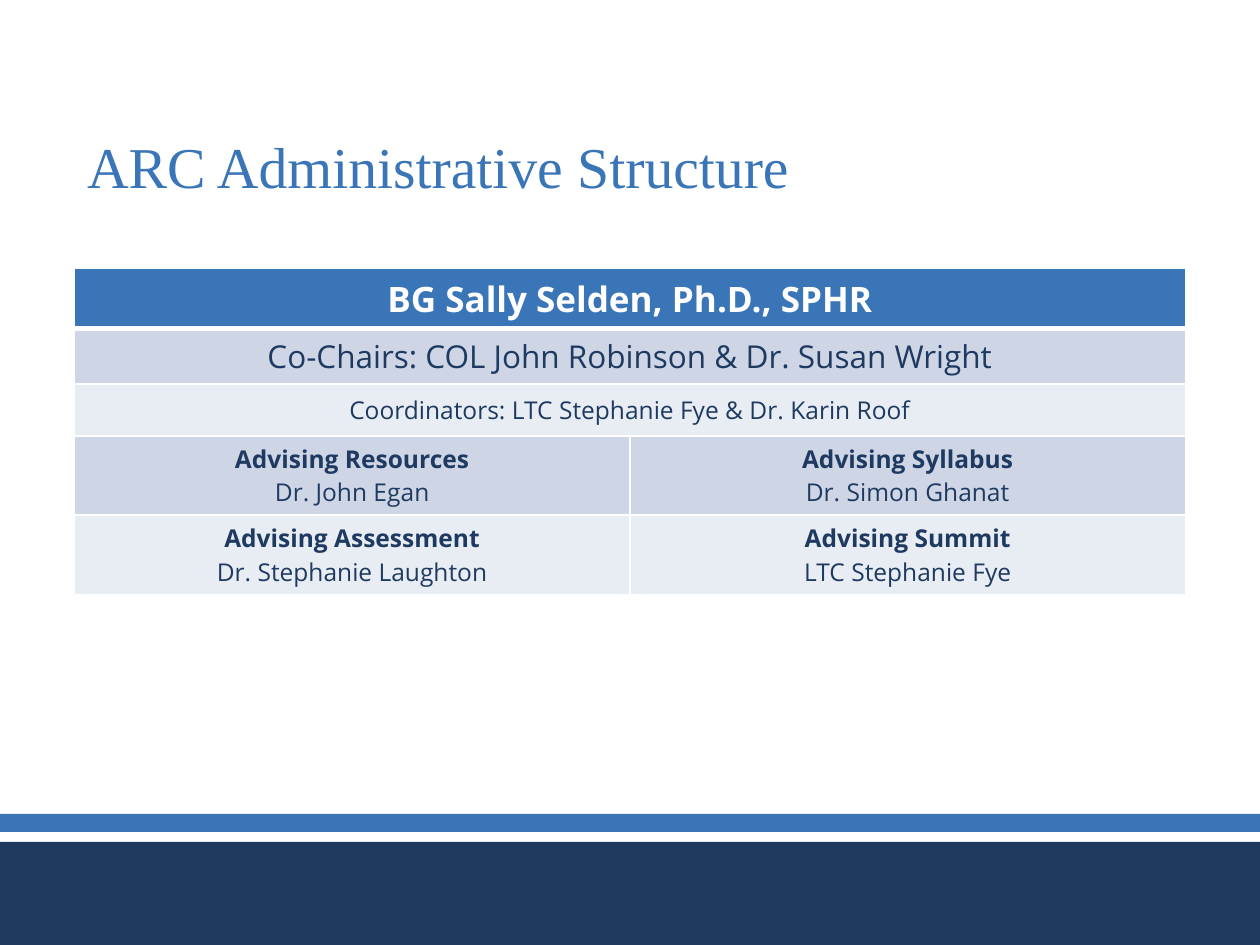
from lxml import etree
from pptx import Presentation
from pptx.dml.color import RGBColor
from pptx.enum import shapes, text
from pptx.oxml import ns
from pptx.util import Cm, Pt

COLORS = {"navy": "1F3A60", "blue": "3975B7", "white": "FFFFFF",
          "dark_band": "CED6E6", "light_band": "E8ECF3"}
TITLE = "ARC Administrative Structure"
LEADERS = [
    ("BG Sally Selden, Ph.D., SPHR", 20, True, "white", "blue", "middle"),
    ("Co-Chairs: COL John Robinson & Dr. Susan Wright", 18, False, "navy", "dark_band", "top"),
    ("Coordinators: LTC Stephanie Fye & Dr. Karin Roof", 14, False, "navy", "light_band", "middle"),
]
COMMITTEES = [
    ("dark_band", [("Advising Resources", "Dr. John Egan"), ("Advising Syllabus", "Dr. Simon Ghanat")]),
    ("light_band", [("Advising Assessment", "Dr. Stephanie Laughton"), ("Advising Summit", "LTC Stephanie Fye")]),
]
FOOTER_BANDS = [("navy", 16.97, 2.08), ("blue", 16.41, 0.36)]
ANCHORS = {"top": text.MSO_ANCHOR.TOP, "middle": text.MSO_ANCHOR.MIDDLE}
LEFT, WIDTH, ROW_HEIGHT = 1.5, 22.4, 1.04


def color(name):
    """Return the named palette color."""
    return RGBColor.from_string(COLORS[name])


def write(paragraph, content, *, size, fill, font="Open Sans", bold=False, align=text.PP_ALIGN.CENTER):
    """Fill a paragraph with one formatted run."""
    paragraph.alignment = align
    run = paragraph.add_run()
    run.text = content
    run.font.name, run.font.size, run.font.bold = font, Pt(size), bold
    run.font.color.rgb = color(fill)


def style_cell(cell, fill, anchor="middle", bottom=1):
    """Set the borders, fill and anchor of a table cell."""
    properties = cell._tc.get_or_add_tcPr()
    for side, width in (("L", 1), ("R", 1), ("T", 1), ("B", bottom)):
        line = etree.SubElement(properties, ns.qn(f"a:ln{side}"), w=str(Pt(width)))
        solid = etree.SubElement(line, ns.qn("a:solidFill"))
        etree.SubElement(solid, ns.qn("a:srgbClr"), val=COLORS["white"])
    cell.fill.solid()
    cell.fill.fore_color.rgb = color(fill)
    cell.vertical_anchor = ANCHORS[anchor]


def add_footer(slide):
    """Draw the full-width bands at the foot of the slide."""
    for fill, top, height in FOOTER_BANDS:
        shape = slide.shapes.add_shape(shapes.MSO_SHAPE.RECTANGLE, 0, Cm(top), Cm(25.4), Cm(height))
        shape.shadow.inherit = False
        shape.fill.solid()
        shape.fill.fore_color.rgb = color(fill)
        shape.line.fill.background()


def add_title(slide):
    """Place and format the title."""
    title = slide.shapes.title
    title.left, title.top, title.width, title.height = Cm(LEFT), Cm(1.02), Cm(WIDTH), Cm(3.15)
    frame = title.text_frame
    frame.auto_size = text.MSO_AUTO_SIZE.NONE
    frame.word_wrap = True
    frame.vertical_anchor = text.MSO_ANCHOR.BOTTOM
    paragraph = frame.paragraphs[0]
    paragraph.line_spacing = 0.9
    write(paragraph, TITLE, size=33, fill="blue", font="Times New Roman", align=text.PP_ALIGN.LEFT)


def add_structure(slide):
    """Build the table of leaders and committees."""
    count = len(LEADERS) + len(COMMITTEES)
    table = slide.shapes.add_table(count, 2, Cm(LEFT), Cm(5.41), Cm(WIDTH), Cm(ROW_HEIGHT * count)).table
    for row, (name, size, bold, ink, fill, anchor) in enumerate(LEADERS):
        for column in range(2):
            style_cell(table.cell(row, column), fill, anchor, bottom=1 if row else 3)
        table.cell(row, 0).merge(table.cell(row, 1))
        write(table.cell(row, 0).text_frame.paragraphs[0], name, size=size, fill=ink, bold=bold)
    for row, (fill, committees) in enumerate(COMMITTEES, len(LEADERS)):
        for column, (committee, chair) in enumerate(committees):
            cell = table.cell(row, column)
            style_cell(cell, fill)
            write(cell.text_frame.paragraphs[0], committee, size=14, fill="navy", bold=True)
            write(cell.text_frame.add_paragraph(), chair, size=14, fill="navy")


def main():
    """Build and save the presentation."""
    presentation = Presentation()
    presentation.slide_width, presentation.slide_height = Cm(25.4), Cm(19.05)
    slide = presentation.slides.add_slide(presentation.slide_layouts[5])
    add_footer(slide)
    add_structure(slide)
    add_title(slide)
    presentation.save("out.pptx")


if __name__ == "__main__":
    main()
